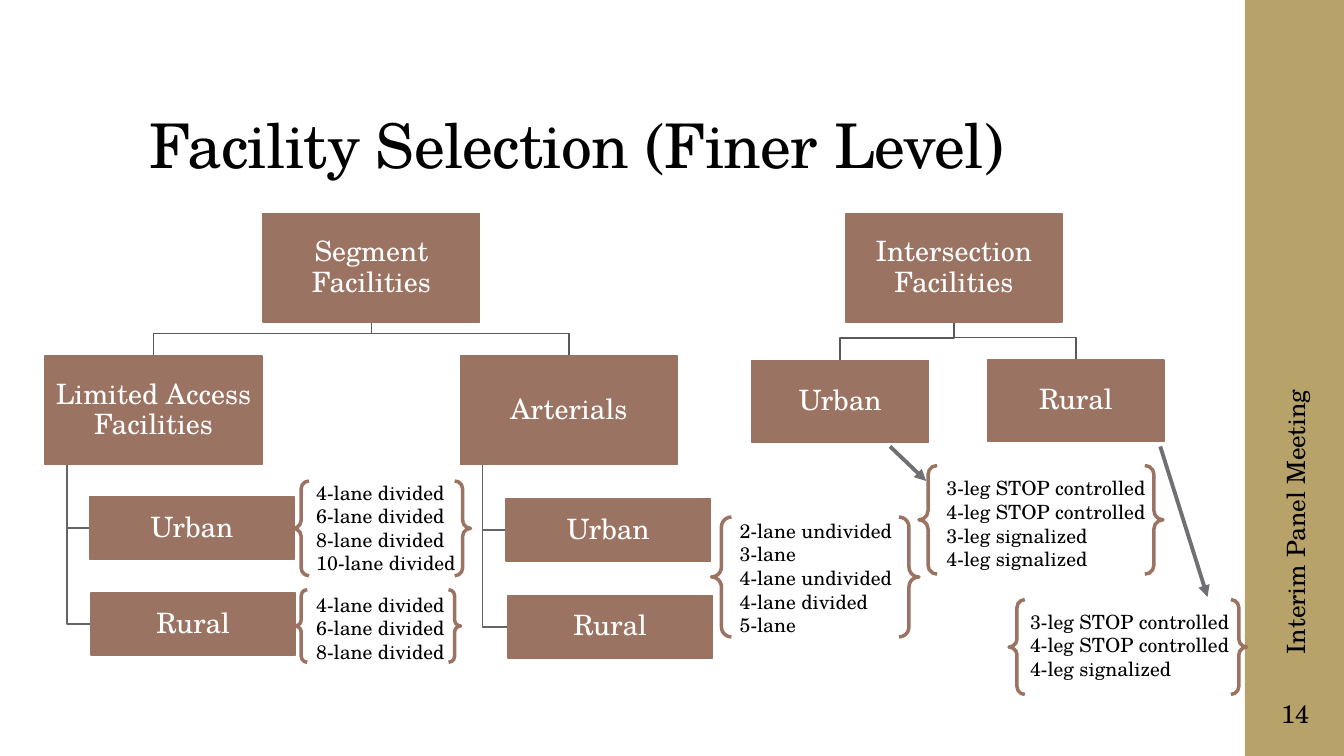
from lxml import etree
from pptx import Presentation
from pptx.dml.color import RGBColor
from pptx.enum.shapes import MSO_CONNECTOR as Connector, MSO_SHAPE as Shape
from pptx.enum.text import MSO_ANCHOR as Anchor, PP_ALIGN as Align
from pptx.oxml.ns import qn
from pptx.util import Cm, Pt

FONT = "TeX Gyre Schola"
BROWN, GOLD, BLACK, WHITE = "9B7362", "B7A369", "000000", "FFFFFF"
TOP_LINE, SIDE_LINE, ARROW = "59595D", "656569", "6F6F74"
LARGE_BOX, TYPE_BOX, ROW_BOX = (5.46, 2.74), (4.45, 2.06), (5.16, 1.57)
BAR_GAP = 0.57


def color(value):
    return RGBColor.from_string(value)


def set_line(shape, value, width):
    shape.line.color.rgb = color(value)
    shape.line.width = Pt(width)


def write(shape, text, size, text_color=BLACK, align=Align.LEFT,
          anchor=Anchor.MIDDLE, spacing=1.0, inset=None):
    frame = shape.text_frame
    frame.text = text
    frame.word_wrap = True
    frame.vertical_anchor = anchor
    if inset is not None:
        frame.margin_left = frame.margin_right = Cm(inset)
        frame.margin_top = frame.margin_bottom = Cm(inset)
    for para in frame.paragraphs:
        para.alignment = align
        para.line_spacing = spacing
        for span in para.runs:
            span.font.name = FONT
            span.font.size = Pt(size)
            span.font.color.rgb = color(text_color)


def add_text(slide, box, text, size, **style):
    text_box = slide.shapes.add_textbox(*map(Cm, box))
    write(text_box, text, size, **style)
    return text_box


def add_plain_shape(slide, kind, box):
    shape = slide.shapes.add_shape(kind, *map(Cm, box))
    shape.shadow.inherit = False
    return shape


def add_node(slide, box, label):
    node = add_plain_shape(slide, Shape.RECTANGLE, box)
    node.fill.solid()
    node.fill.fore_color.rgb = color(BROWN)
    set_line(node, BROWN, 1.1)
    write(node, label, 20, WHITE, Align.CENTER, spacing=0.9, inset=0.03)


def add_branch(slide, points, value):
    """Draw an open bent line through points given in centimetres."""
    start, *rest = [(Cm(x), Cm(y)) for x, y in points]
    builder = slide.shapes.build_freeform(*start)
    builder.add_line_segments(rest, close=False)
    branch = builder.convert_to_shape()
    branch.shadow.inherit = False
    branch.fill.background()
    set_line(branch, value, 1.1)


def add_parent(slide, box, label, children):
    """Draw a top node and its branches to the (left, top, width) of each child."""
    left, top, width, height = box
    middle = left + width / 2
    for child_left, child_top, child_width in children:
        child_middle, bar = child_left + child_width / 2, child_top - BAR_GAP
        add_branch(slide, [(middle, top + height), (middle, bar),
                           (child_middle, bar), (child_middle, child_top)], TOP_LINE)
    add_node(slide, box, label)


def add_segment_type(slide, left, top, label, rows):
    """Draw a segment node with rows of (label, right shift, drop) hanging below."""
    trunk = left + 0.55
    for row_label, shift, drop in rows:
        middle = top + drop + ROW_BOX[1] / 2
        add_branch(slide, [(trunk, top + LARGE_BOX[1]), (trunk, middle),
                           (left + shift, middle)], SIDE_LINE)
        add_node(slide, (left + shift, top + drop, *ROW_BOX), row_label)
    add_node(slide, (left, top, *LARGE_BOX), label)


def add_segment_tree(slide, left, top):
    types = [
        ("Limited Access Facilities", left, [("Urban", 1.12, 3.55), ("Rural", 1.15, 5.97)]),
        ("Arterials", left + 10.47, [("Urban", 1.14, 3.6), ("Rural", 1.19, 6.04)]),
    ]
    types_top = top + 3.59
    add_parent(slide, (left + 5.49, top, *LARGE_BOX), "Segment Facilities",
               [(type_left, types_top, LARGE_BOX[0]) for _, type_left, _ in types])
    for label, type_left, rows in types:
        add_segment_type(slide, type_left, types_top, label, rows)


def add_intersection_tree(slide, left, top):
    types = [("Urban", left, top + 3.71), ("Rural", left + 5.94, top + 3.69)]
    add_parent(slide, (left + 2.36, top, *LARGE_BOX), "Intersection\nFacilities",
               [(type_left, type_top, TYPE_BOX[0]) for _, type_left, type_top in types])
    for label, type_left, type_top in types:
        add_node(slide, (type_left, type_top, *TYPE_BOX), label)


def add_braced_list(slide, box, shift, text_width, items):
    """Draw a list, shifted from the corner of the box, and the braces filling the box."""
    left, top, _, height = box
    text_area = (left + shift[0], top + shift[1], text_width, height)
    add_text(slide, text_area, "\n".join(items), 14, anchor=Anchor.TOP)
    braces = add_plain_shape(slide, Shape.DOUBLE_BRACE, box)
    braces.fill.background()
    set_line(braces, BROWN, 2.5)


def add_arrow(slide, start, end):
    arrow = slide.shapes.add_connector(Connector.STRAIGHT, *map(Cm, start + end))
    set_line(arrow, ARROW, 2.75)
    etree.SubElement(arrow.line._get_or_add_ln(), qn("a:tailEnd"), type="triangle")
    etree.SubElement(arrow._element.spPr, qn("a:effectLst"))


def add_title(slide, box, text):
    title = slide.shapes.title
    title.left, title.top, title.width, title.height = map(Cm, box)
    write(title, text, 44, anchor=Anchor.BOTTOM, spacing=0.9)
    for span in title.text_frame.paragraphs[0].runs:
        span.font._element.set("spc", "-50")


def add_side_band(slide, box):
    left, top, width, height = box
    band = add_plain_shape(slide, Shape.RECTANGLE, box)
    band.fill.solid()
    band.fill.fore_color.rgb = color(GOLD)
    band.line.fill.background()
    meeting = add_text(slide, (left - 3.71, top + 11.25, 9.96, 1.02),
                       "Interim Panel Meeting", 18)
    meeting.rotation = 270
    add_text(slide, (left, top + 17.15, width, 1.65), "14", 18,
             align=Align.CENTER, inset=0.13)


def add_facility_slide(deck):
    slide = deck.slides.add_slide(deck.slide_layouts[5])
    add_side_band(slide, (31.37, 0, 2.54, 19.05))
    add_title(slide, (3.51, 1.02, 26.92, 3.68), "Facility Selection (Finer Level)")
    add_segment_tree(slide, 1.14, 5.38)
    add_intersection_tree(slide, 18.95, 5.38)

    divided = ["4-lane divided", "6-lane divided", "8-lane divided"]
    stop = ["3-leg STOP controlled", "4-leg STOP controlled"]
    arterial = ["2-lane undivided", "3-lane", "4-lane undivided", "4-lane divided", "5-lane"]
    braced_lists = [
        ((23.16, 11.73, 6.15, 2.74), (0.44, 0.15), 6.99,
         stop + ["3-leg signalized", "4-leg signalized"]),
        ((7.39, 12.12, 4.47, 2.39), (0.33, -0.13), 4.65, divided + ["10-lane divided"]),
        ((17.93, 13.03, 5.23, 3.02), (0.46, -0.08), 5.46, arterial),
        ((25.43, 15.11, 5.99, 2.39), (0.28, 0.13), 6.83, stop + ["4-leg signalized"]),
        ((7.44, 14.86, 4.17, 1.83), (0.28, -0.05), 4.34, divided),
    ]
    for box, shift, text_width, items in braced_lists:
        add_braced_list(slide, box, shift, text_width, items)
    add_arrow(slide, (22.43, 11.25), (23.34, 12.12))
    add_arrow(slide, (29.24, 11.25), (30.43, 15.04))


def main():
    deck = Presentation()
    deck.slide_width, deck.slide_height = Cm(33.87), Cm(19.05)
    add_facility_slide(deck)
    deck.save("out.pptx")


if __name__ == "__main__":
    main()
